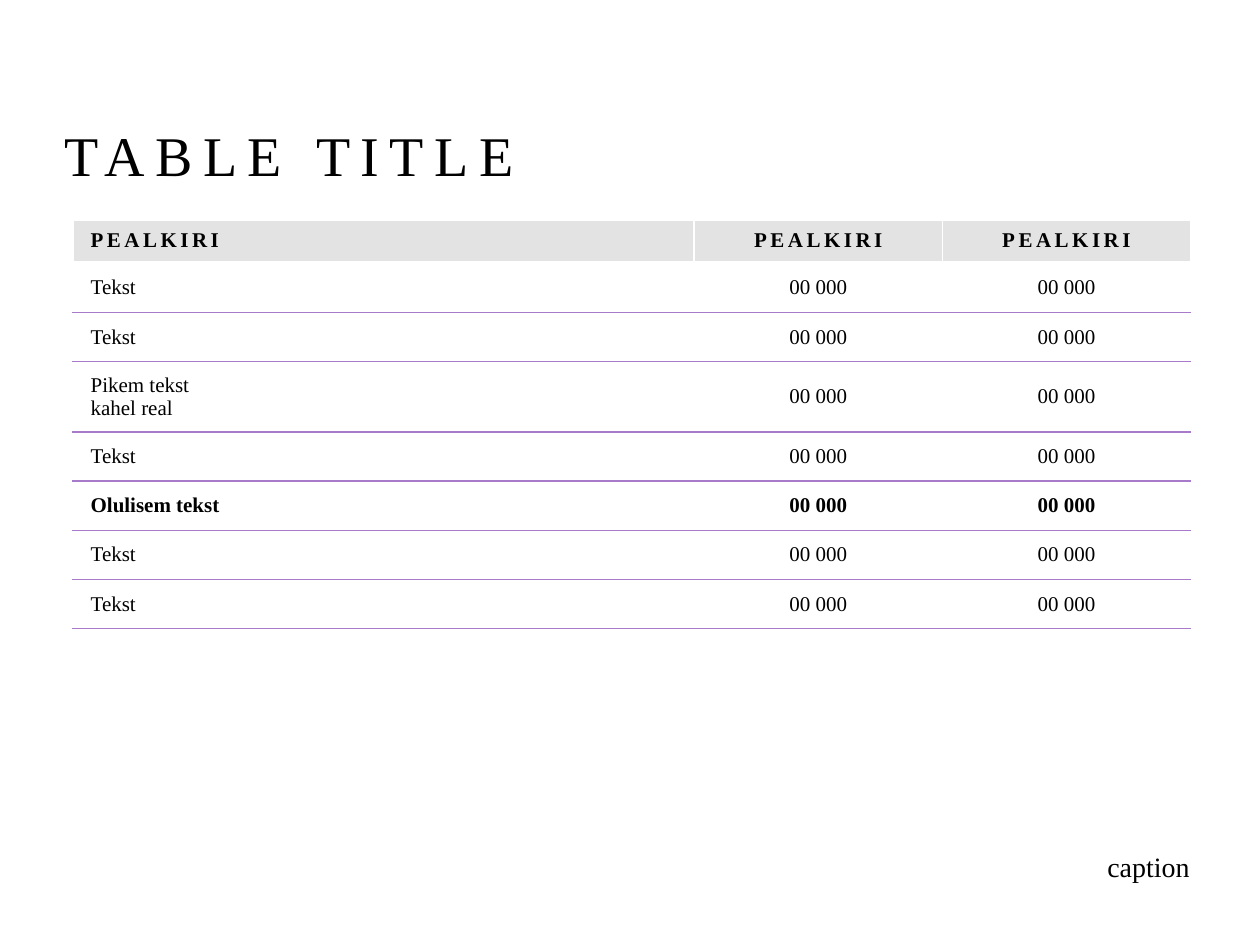
from copy import deepcopy

from lxml import etree
from pptx import Presentation
from pptx.dml.color import RGBColor
from pptx.enum.text import MSO_ANCHOR, PP_ALIGN
from pptx.oxml.ns import qn
from pptx.util import Inches, Pt

LEFT, CENTER, RIGHT = PP_ALIGN.LEFT, PP_ALIGN.CENTER, PP_ALIGN.RIGHT
TOP, MIDDLE, BOTTOM = MSO_ANCHOR.TOP, MSO_ANCHOR.MIDDLE, MSO_ANCHOR.BOTTOM

BLACK = RGBColor(0x00, 0x00, 0x00)
WHITE = RGBColor(0xFF, 0xFF, 0xFF)
GRAY = RGBColor(0xE3, 0xE3, 0xE3)
PURPLE = RGBColor(0xA7, 0x7B, 0xCA)
FONT = "Times New Roman"

COLUMN_WIDTHS = (4.93, 1.97, 1.97)
HEADER_HEIGHT, ROW_HEIGHT, TALL_ROW_HEIGHT = 0.3, 0.39, 0.56
HEADER = "PEALKIRI"
VALUE = "00 000"
IMPORTANT = "Olulisem tekst"
ROW_LABELS = ("Tekst", "Tekst", "Pikem tekst\nkahel real", "Tekst",
              IMPORTANT, "Tekst", "Tekst")


def write_text(text_frame, text, size=12, bold=False, align=LEFT, spacing=0):
    """Fill the first paragraph; spacing is the letter spacing in points."""
    paragraph = text_frame.paragraphs[0]
    paragraph.text = text
    paragraph.alignment = align
    for run in paragraph.runs:
        run.font.name = FONT
        run.font.size = Pt(size)
        run.font.bold = bold
        run.font.color.rgb = BLACK
        if spacing:
            run.font._element.set("spc", str(spacing * 100))
    for line_break in paragraph._p.findall(qn("a:br")):
        line_break.append(deepcopy(paragraph.runs[0].font._element))
    return paragraph


def add_text_box(slide, left, top, width, height, text, **text_format):
    box = slide.shapes.add_textbox(Inches(left), Inches(top),
                                   Inches(width), Inches(height))
    box.text_frame.word_wrap = True
    box.text_frame.vertical_anchor = BOTTOM
    return write_text(box.text_frame, text, **text_format)


def set_border(cell, side, color, width=1):
    properties = cell._tc.get_or_add_tcPr()
    line = etree.SubElement(properties, qn(f"a:ln{side}"), w=str(Pt(width)))
    fill = etree.SubElement(line, qn("a:solidFill"))
    etree.SubElement(fill, qn("a:srgbClr"), val=str(color))


def format_cell(cell, row_index):
    is_header = row_index == 0
    cell.margin_left = cell.margin_right = Inches(0.14)
    cell.margin_top = cell.margin_bottom = Inches(0.07)
    cell.vertical_anchor = TOP if is_header else MIDDLE
    set_border(cell, "L", WHITE)
    set_border(cell, "R", WHITE)
    if is_header:
        set_border(cell, "T", WHITE)
        set_border(cell, "B", WHITE, 3)
        cell.fill.solid()
        cell.fill.fore_color.rgb = GRAY
    else:
        if row_index == 1:
            set_border(cell, "T", WHITE, 3)
        else:
            set_border(cell, "T", PURPLE)
        set_border(cell, "B", PURPLE)
        cell.fill.background()


def add_value_table(slide, left, top):
    heights = [HEADER_HEIGHT] + [TALL_ROW_HEIGHT if "\n" in label else ROW_HEIGHT
                                 for label in ROW_LABELS]
    rows = [(HEADER,) * 3] + [(label, VALUE, VALUE) for label in ROW_LABELS]
    table = slide.shapes.add_table(
        len(rows), len(COLUMN_WIDTHS), Inches(left), Inches(top),
        Inches(sum(COLUMN_WIDTHS)), Inches(sum(heights))).table
    for column, width in zip(table.columns, COLUMN_WIDTHS):
        column.width = Inches(width)
    for row_index, (texts, height) in enumerate(zip(rows, heights)):
        table.rows[row_index].height = Inches(height)
        is_header = row_index == 0
        for column_index, text in enumerate(texts):
            cell = table.cell(row_index, column_index)
            format_cell(cell, row_index)
            write_text(cell.text_frame, text,
                       bold=is_header or texts[0] == IMPORTANT,
                       align=CENTER if column_index else LEFT,
                       spacing=2 if is_header else 0)


def main():
    presentation = Presentation()
    presentation.slide_width = Inches(10)
    presentation.slide_height = Inches(7.5)
    slide = presentation.slides.add_slide(presentation.slide_layouts[6])

    add_text_box(slide, 0.41, 0.3, 9.15, 1.24, "TABLE TITLE", size=32, spacing=6)
    add_value_table(slide, 0.58, 1.75)
    caption = add_text_box(slide, 3.01, 6.44, 6.53, 0.62, "caption",
                           size=16, align=RIGHT)
    caption.line_spacing = 1.2

    presentation.save("out.pptx")


if __name__ == "__main__":
    main()
